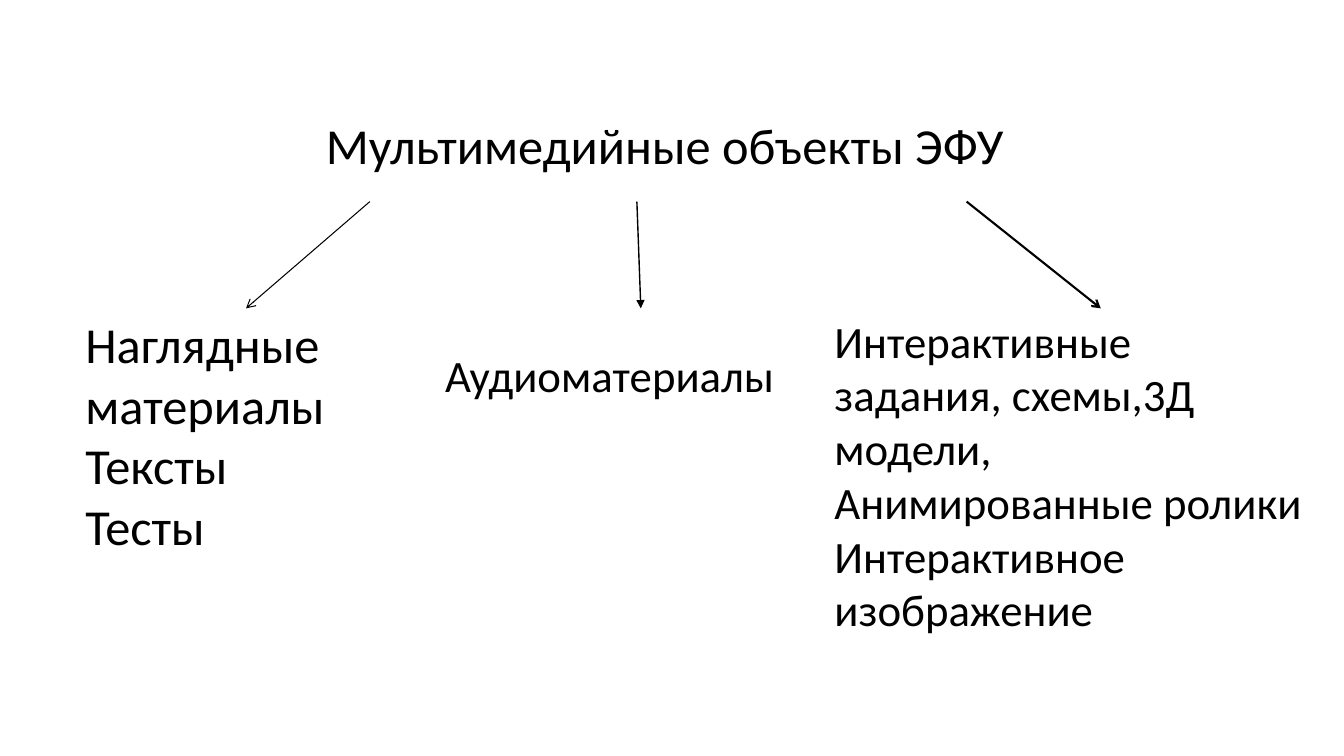
"""Build a slide that sorts the multimedia objects of an electronic textbook."""
from typing import NamedTuple

from lxml.etree import SubElement as Sub
from pptx import Presentation
from pptx.dml.color import RGBColor
from pptx.enum.shapes import MSO_CONNECTOR as Link
from pptx.enum.text import MSO_AUTO_SIZE as Fit, PP_ALIGN as Align
from pptx.oxml.ns import qn
from pptx.slide import Slide
from pptx.util import Cm, Pt

BLACK = RGBColor(0, 0, 0)
FONT = "Calibri"
TOP, END = 5.08, 7.77


class Label(NamedTuple):
    left: float
    top: float
    width: float
    height: float
    size: int
    lines: list[str]
    align: Align = Align.LEFT


class Arrow(NamedTuple):
    start: float
    end: float
    weight: float
    head: str


LABELS = [
    Label(7.77, 2.74, 18.26, 1.8, 36, ["Мультимедийные объекты ЭФУ "], Align.CENTER),
    Label(1.9, END, 9.93, 6.4, 36, ["Наглядные материалы", "Тексты", "Тесты"]),
    Label(10.97, 8.64, 9.14, 1.63, 32, ["Аудиоматериалы"]),
    Label(20.78, END, 12.32, 10.19, 32, [
        "Интерактивные задания, схемы,3Д модели, Анимированные ролики",
        "Интерактивное изображение",
    ]),
]

ARROWS = [
    Arrow(9.32, 6.2, 0.75, "arrow"),
    Arrow(16.05, 16.15, 1, "triangle"),
    Arrow(24.36, 27.74, 1.5, "arrow"),
]


def add_label(slide: Slide, label: Label) -> None:
    """Write one text block."""
    box = slide.shapes.add_textbox(
        Cm(label.left), Cm(label.top), Cm(label.width), Cm(label.height))
    frame = box.text_frame
    frame.word_wrap = True
    frame.auto_size = Fit.SHAPE_TO_FIT_TEXT
    frame.text = "\n".join(label.lines)
    for para in frame.paragraphs:
        para.alignment = label.align
        for run in para.runs:
            run.font.name = FONT
            run.font.size = Pt(label.size)
            run.font.color.rgb = BLACK


def add_arrow(slide: Slide, arrow: Arrow) -> None:
    """Draw one arrow from the heading down to a group."""
    link = slide.shapes.add_connector(
        Link.STRAIGHT, Cm(arrow.start), Cm(TOP), Cm(arrow.end), Cm(END))
    link.line.color.rgb = BLACK
    link.line.width = Pt(arrow.weight)
    props = link.element.spPr
    Sub(props.find(qn("a:ln")), qn("a:tailEnd"), type=arrow.head)
    Sub(props, qn("a:effectLst"))


def main() -> None:
    """Build and save the slide."""
    deck = Presentation()
    deck.slide_width, deck.slide_height = Cm(33.87), Cm(19.05)
    slide = deck.slides.add_slide(deck.slide_layouts[6])
    for label in LABELS:
        add_label(slide, label)
    for arrow in ARROWS:
        add_arrow(slide, arrow)
    deck.save("out.pptx")


if __name__ == "__main__":
    main()
